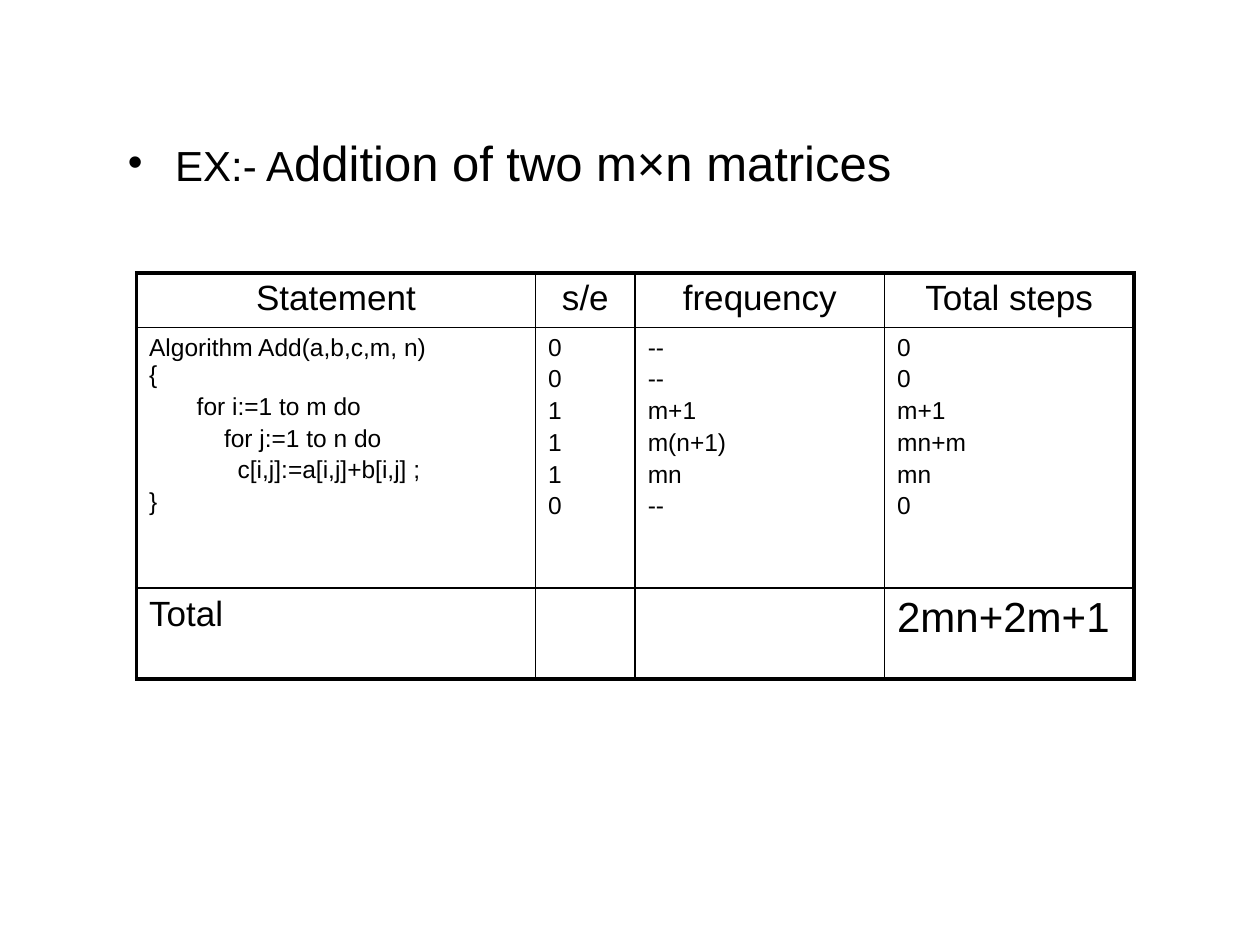
from pptx import Presentation
from pptx.util import Pt
from pptx.dml.color import RGBColor as RGB
from pptx.enum.text import PP_ALIGN as Align
from pptx.oxml.ns import qn
from lxml.etree import SubElement as Sub

BLACK = "000000"
THIN, THICK = 1, 2.25
COLS = [228, 57, 142.5, 142.5]
ROWS = [31.2, 148.8, 52]
HEAD = ["Statement", "s/e", "frequency", "Total steps"]
BODY = [
    "Algorithm Add(a,b,c,m, n)\v{\nfor i:=1 to m do\nfor j:=1 to n do\n"
    "c[i,j]:=a[i,j]+b[i,j] ;\n}",
    "0\n0\n1\n1\n1\n0",
    "--\n--\nm+1\nm(n+1)\nmn\n--",
    "0\n0\nm+1\nmn+m\nmn\n0",
]
TOTAL = ["Total", "", "", "2mn+2m+1"]
CODE_INDENT = [0, 27.2, 42.8, 50.6, 0]


def color(code):
    return RGB.from_string(code)


def style(run, size):
    run.font.name = "Arial"
    run.font.size = Pt(size)
    run.font.color.rgb = color(BLACK)


def border(cell, widths):
    props = cell._tc.get_or_add_tcPr()
    for side, width in zip("LRTB", widths):
        line = Sub(props, qn(f"a:ln{side}"), w=str(Pt(width)))
        fill = Sub(line, qn("a:solidFill"))
        Sub(fill, qn("a:srgbClr"), val=BLACK)


def heading(slide, x, y, w, h):
    frame = slide.shapes.add_textbox(Pt(x), Pt(y), Pt(w), Pt(h)).text_frame
    frame.word_wrap = True
    para = frame.paragraphs[0]
    para.space_before = Pt(3)
    for text, size in [("EX:- A", 24), ("ddition of two m×n matrices", 28)]:
        run = para.add_run()
        run.text = text
        style(run, size)
    # Hanging bullet
    props = para._p.get_or_add_pPr()
    props.set("marL", str(Pt(27)))
    props.set("indent", str(-Pt(27)))
    Sub(props, qn("a:buFont"), typeface="Arial")
    Sub(props, qn("a:buChar"), char="•")


def fill_cell(cell, text, size, align):
    cell.text_frame.text = text
    for i, para in enumerate(cell.text_frame.paragraphs):
        para.alignment = align
        if i:
            para.space_before = Pt(2.4)
        for run in para.runs:
            style(run, size)


def step_table(slide, x, y):
    shape = slide.shapes.add_table(len(ROWS), len(COLS), Pt(x), Pt(y),
                                   Pt(sum(COLS)), Pt(sum(ROWS)))
    table = shape.table
    table.first_row = table.horz_banding = False
    for col, width in zip(table.columns, COLS):
        col.width = Pt(width)
    for row, height in zip(table.rows, ROWS):
        row.height = Pt(height)

    # Text, with a thick frame around thin inner lines
    last_r, last_c = len(ROWS) - 1, len(COLS) - 1
    for r, texts in enumerate([HEAD, BODY, TOTAL]):
        for c, text in enumerate(texts):
            cell = table.cell(r, c)
            size = 14 if r == 1 else 24 if (r, c) == (last_r, last_c) else 20
            fill_cell(cell, text, size, Align.CENTER if r == 0 else Align.LEFT)
            edges = [c == 0, c == last_c, r == 0, r == last_r]
            border(cell, [THICK if edge else THIN for edge in edges])
            cell.fill.background()

    # Code indents
    for para, left in zip(table.cell(1, 0).text_frame.paragraphs, CODE_INDENT):
        para._p.get_or_add_pPr().set("marL", str(Pt(left)))


def main():
    deck = Presentation()
    deck.slide_width, deck.slide_height = Pt(720), Pt(540)
    slide = deck.slides.add_slide(deck.slide_layouts[6])
    heading(slide, 66, 72, 480, 68)
    step_table(slide, 78, 156)
    deck.save("out.pptx")


if __name__ == "__main__":
    main()
